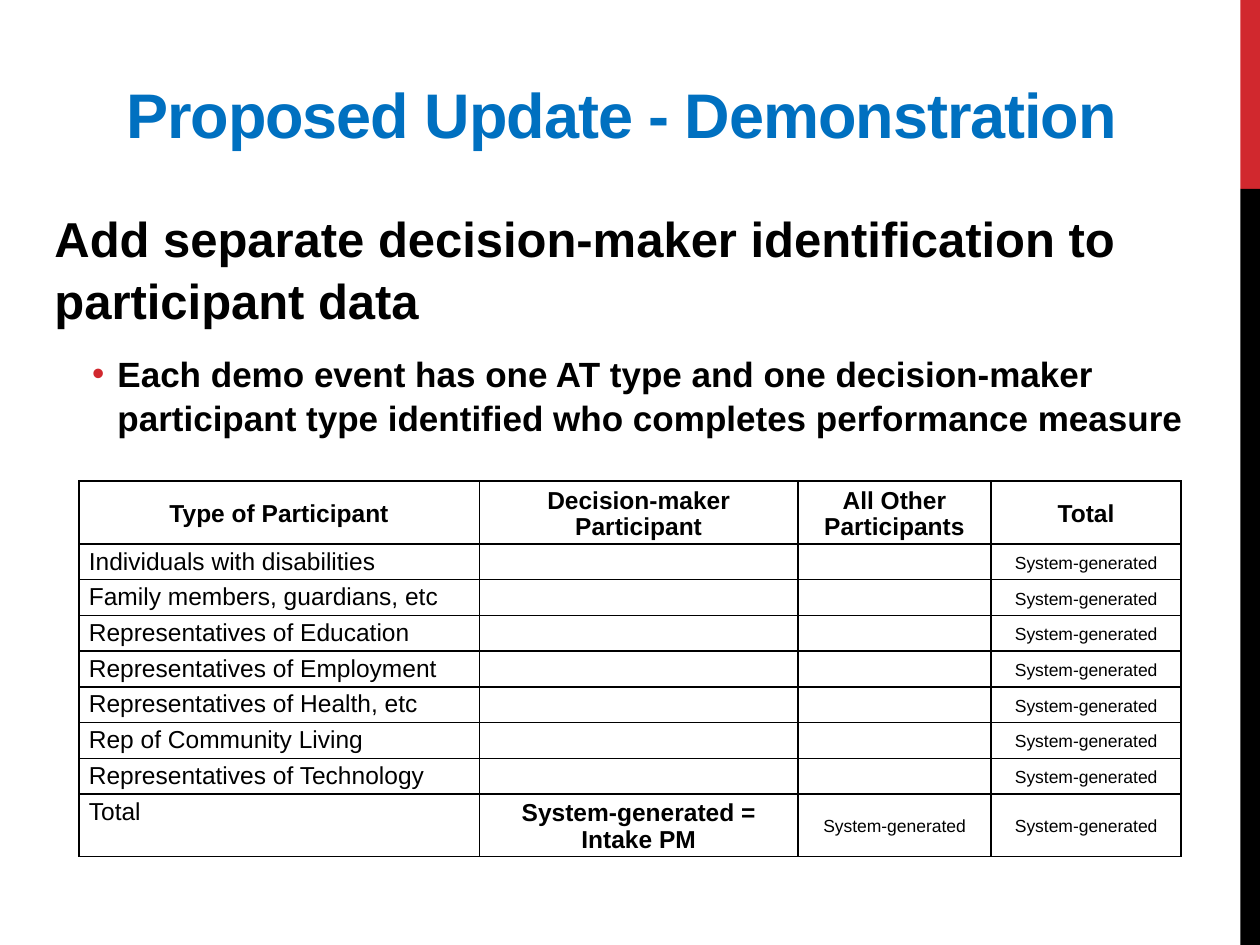
from dataclasses import dataclass

from lxml import etree
from pptx import Presentation
from pptx.dml.color import RGBColor
from pptx.enum.shapes import MSO_SHAPE
from pptx.enum.text import MSO_ANCHOR, PP_ALIGN
from pptx.oxml.ns import qn
from pptx.util import Pt

RECT = MSO_SHAPE.RECTANGLE
LEFT, CENTER = PP_ALIGN.LEFT, PP_ALIGN.CENTER
TOP, MIDDLE, BOTTOM = MSO_ANCHOR.TOP, MSO_ANCHOR.MIDDLE, MSO_ANCHOR.BOTTOM


@dataclass(frozen=True)
class Theme:
    font: str = "Arial"
    blue: str = "0070C0"
    red: str = "D1282E"
    black: str = "000000"
    title: int = 36
    lead: int = 28
    point: int = 20
    cell: int = 14
    small: int = 10


def add_node(parent, tag, **attrs):
    return etree.SubElement(parent, qn(tag), attrs)


def add_color(parent, color):
    add_node(add_node(parent, "a:solidFill"), "a:srgbClr", val=color)


class Deck:
    def __init__(self, theme):
        self.theme = theme
        self.file = Presentation()
        self.file.slide_width, self.file.slide_height = Pt(720), Pt(540)
        self.slide = self.file.slides.add_slide(self.file.slide_layouts[6])

    def bar(self, x, y, w, h, color):
        shape = self.slide.shapes.add_shape(RECT, Pt(x), Pt(y), Pt(w), Pt(h))
        shape.shadow.inherit = False
        shape.fill.solid()
        shape.fill.fore_color.rgb = RGBColor.from_string(color)
        shape.line.fill.background()

    def style(self, para, size, color, bold=True, align=LEFT):
        para.alignment = align
        for run in para.runs:
            run.font.name = self.theme.font
            run.font.size = Pt(size)
            run.font.bold = bold
            run.font.color.rgb = RGBColor.from_string(color)

    def text(self, x, y, w, h, lines, anchor=TOP):
        box = self.slide.shapes.add_textbox(Pt(x), Pt(y), Pt(w), Pt(h))
        frame = box.text_frame
        frame.word_wrap = True
        frame.vertical_anchor = anchor
        frame.text = "\n".join(lines)
        for para in frame.paragraphs:
            para.space_after = Pt(12)
        return frame.paragraphs

    def title(self, x, y, w, h, words):
        para = self.text(x, y, w, h, [words], BOTTOM)[0]
        self.style(para, self.theme.title, self.theme.blue, align=CENTER)
        para.runs[0].font._element.set("spc", "-60")

    def body(self, x, y, w, h, lead, point):
        head, item = self.text(x, y, w, h, [lead, point])
        self.style(head, self.theme.lead, self.theme.black)
        self.style(item, self.theme.point, self.theme.black)
        head.line_spacing = item.line_spacing = 1.05
        props = item._p.get_or_add_pPr()
        props.set("marL", str(Pt(36)))
        props.set("indent", str(Pt(-14.4)))
        add_node(add_node(props, "a:buClr"), "a:srgbClr", val=self.theme.red)
        add_node(props, "a:buFont", typeface=self.theme.font)
        add_node(props, "a:buChar", char="•")

    def border(self, cell):
        props = cell._tc.get_or_add_tcPr()
        for side in ("a:lnL", "a:lnR", "a:lnT", "a:lnB"):
            add_color(add_node(props, side, w=str(Pt(1))), self.theme.black)

    def cell(self, cell, words, size, bold, align, anchor):
        cell.margin_left = cell.margin_right = Pt(5.76)
        cell.margin_top, cell.margin_bottom = Pt(2.88), Pt(0.72)
        cell.vertical_anchor = anchor
        self.border(cell)
        cell.fill.background()
        cell.text_frame.text = words
        for para in cell.text_frame.paragraphs:
            self.style(para, size, self.theme.black, bold, align)
            para.line_spacing = 0.96
            if not words:
                add_node(para._p, "a:endParaRPr", sz=str(size * 100))

    def table(self, x, y, widths, heights, rows):
        frame = self.slide.shapes.add_table(
            len(rows), len(widths), Pt(x), Pt(y), Pt(sum(widths)), Pt(sum(heights)))
        grid = frame.table
        grid.first_row = grid.horz_banding = False
        for col, width in zip(grid.columns, widths):
            col.width = Pt(width)
        for r, (row, height) in enumerate(zip(rows, heights)):
            grid.rows[r].height = Pt(height)
            for c, words in enumerate(row):
                label = r > 0 and c == 0
                size = self.theme.small if words == AUTO else self.theme.cell
                bold = r == 0 or words == INTAKE
                align, anchor = (LEFT, TOP) if label else (CENTER, MIDDLE)
                self.cell(grid.cell(r, c), words, size, bold, align, anchor)


AUTO = "System-generated"
INTAKE = "System-generated =\nIntake PM"
HEAD = ["Type of Participant", "Decision-maker Participant",
        "All Other Participants", "Total"]
GROUPS = ["Individuals with disabilities", "Family members, guardians, etc",
          "Representatives of Education", "Representatives of Employment",
          "Representatives of Health, etc", "Rep of Community Living",
          "Representatives of Technology"]


def main():
    theme = Theme()
    deck = Deck(theme)
    deck.bar(708.75, 0, 11.25, 108, theme.red)
    deck.bar(708.75, 108, 11.25, 432, theme.black)
    deck.title(36, 24, 648, 66, "Proposed Update - Demonstration ")
    deck.body(24, 114, 666, 144,
              "Add separate decision-maker identification to participant data",
              "Each demo event has one AT type and one decision-maker "
              "participant type identified who completes performance measure")
    rows = [HEAD, *([name, "", "", AUTO] for name in GROUPS),
            ["Total", INTAKE, AUTO, AUTO]]
    heights = [35.2, *[19.3] * len(GROUPS), 35.2]
    deck.table(45, 275, [229, 182, 110.3, 108.7], heights, rows)
    deck.file.save("out.pptx")


if __name__ == "__main__":
    main()
